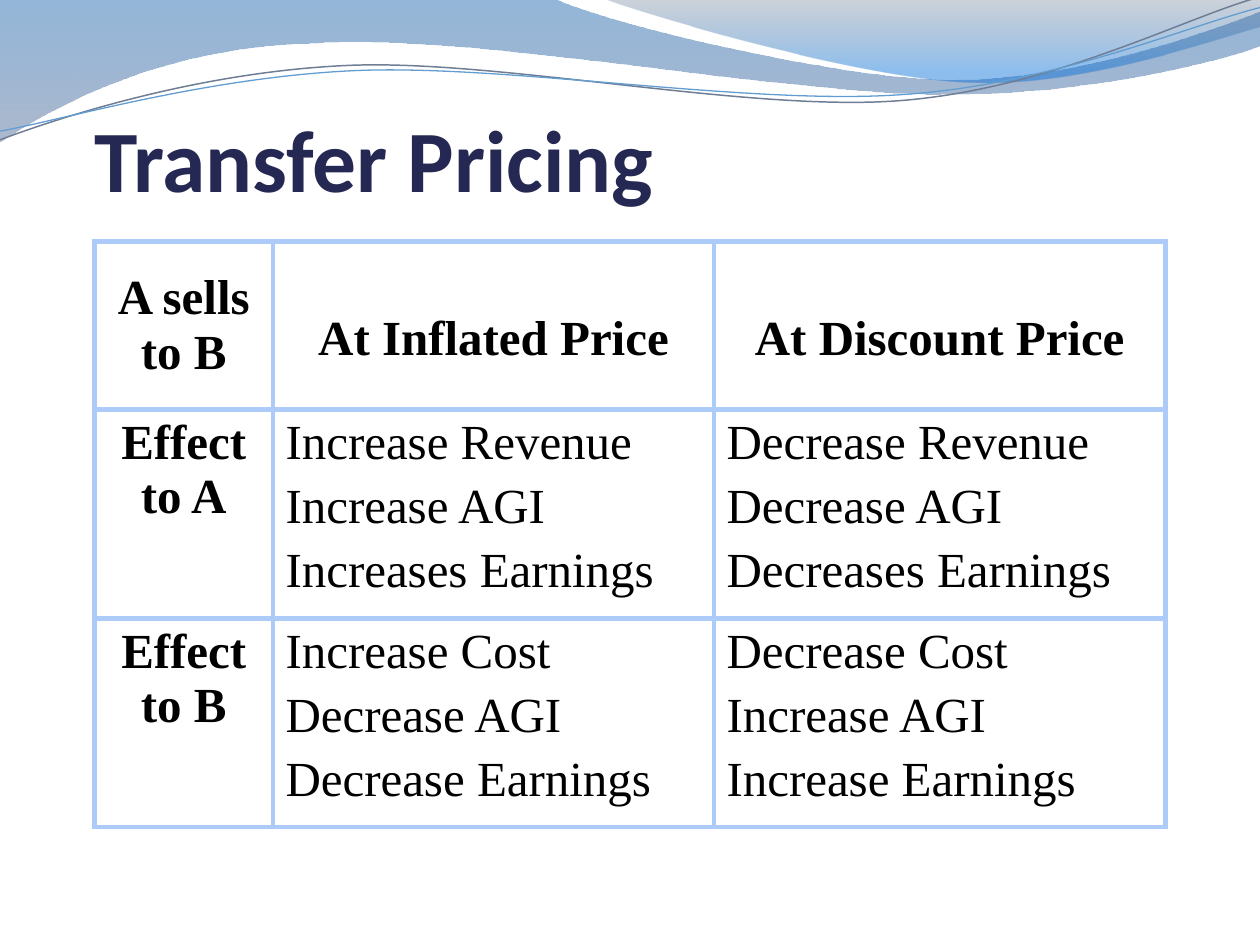
from dataclasses import dataclass

from lxml import etree
from pptx import Presentation
from pptx.dml.color import RGBColor
from pptx.enum.text import MSO_ANCHOR, PP_ALIGN
from pptx.oxml.ns import qn
from pptx.util import Pt

TOP, MIDDLE, BOTTOM = MSO_ANCHOR.TOP, MSO_ANCHOR.MIDDLE, MSO_ANCHOR.BOTTOM
LEFT, CENTER = PP_ALIGN.LEFT, PP_ALIGN.CENTER


@dataclass(frozen=True)
class Theme:
    title: str = "242852"
    text: str = "000000"
    border: str = "ACCBF9"
    border_width: float = 3
    title_font: str = "Calibri"
    body_font: str = "Times New Roman"
    title_size: float = 50
    body_size: float = 28
    space_before: int = 20  # percent of the line
    # Gradient stops: position, colour, opacity in percent
    wide_wave: tuple = ((0, "125EAA", 45), (1, "697FA4", 55))
    small_wave: tuple = ((0, "596982", 30), (0.8, "0670DA", 45))
    # Line colour and width
    grey_line: tuple = ("707E95", 0.85)
    blue_line: tuple = ("629DD1", 0.75)


THEME = Theme()

# Outlines in points: a pair is a line end, six numbers are a Bezier segment
WIDE_WAVE = [
    (0, 0), (316.8, -0.7),
    (342.7, 12.2, 478.1, 45.4, 545.8, 45.4),
    (614.2, 45.4, 689.8, 18.7, 720, 6.5),
    (720.7, 25.9),
    (707.8, 31.7, 626.4, 54.7, 537.1, 54),
    (447.8, 54, 275, 20.2, 185, 24.5),
    (92.9, 25.9, 33.1, 59.8, -0.7, 81.4),
    (0, 0),
]
SMALL_WAVE = [
    (344.9, -0.7),
    (366.5, 7.9, 491, 44.6, 553.7, 46.8),
    (616.3, 49.7, 691.9, 23, 720, 15.1),
    (720, 0), (344.9, -0.7),
]
GREY_LINE = [
    (0, 79.9),
    (34.6, 67, 113.8, 41, 199.4, 37.4),
    (284.4, 33.8, 427, 64.1, 513.4, 57.6),
    (599.8, 51.1, 675.4, 10.8, 718.6, -1.4),
]
BLUE_LINE = [
    (0, 74.9),
    (33.8, 69.1, 118.1, 43.9, 203.8, 40.3),
    (289.4, 36.7, 429.8, 60.5, 516.2, 54),
    (601.9, 48.2, 677.5, 15.1, 720, 4.3),
]

COLUMN_WIDTHS = [102, 252, 258]
ROW_HEIGHTS = [96, 111.5, 111.5]
PRICE_TOP_MARGIN = 40
ROWS = [
    [["A sells to B"], ["At Inflated Price"], ["At Discount Price"]],
    [["Effect to A"],
     ["Increase Revenue", "Increase AGI", "Increases Earnings"],
     ["Decrease Revenue", "Decrease AGI", "Decreases Earnings"]],
    [["Effect to B"],
     ["Increase Cost", "Decrease AGI", "Decrease Earnings"],
     ["Decrease Cost", "Increase AGI", "Increase Earnings"]],
]


def rgb(color):
    return RGBColor.from_string(color)


def add_run(p, text, font, size, color, bold):
    r = p.add_run()
    r.text = text
    r.font.name, r.font.size, r.font.bold = font, Pt(size), bold
    r.font.color.rgb = rgb(color)


def add_outline(slide, box, outline, close):
    """Build the outline through all its points, then turn triples into curves."""
    left, top = box[:2]
    points = [(Pt(left + segment[i]), Pt(top + segment[i + 1]))
              for segment in outline for i in range(0, len(segment), 2)]
    builder = slide.shapes.build_freeform(*points[0])
    builder.add_line_segments(points[1:], close=close)
    sp = builder.convert_to_shape()
    sp.shadow.inherit = False

    lines = iter(list(sp._element.iter(qn("a:lnTo"))))
    for segment in outline[1:]:
        line = next(lines)
        if len(segment) == 6:
            curve = etree.Element(qn("a:cubicBezTo"))
            line.addprevious(curve)
            for part in (line, next(lines), next(lines)):
                curve.append(part[0])
                part.getparent().remove(part)
    return sp


def add_waves(slide, box):
    # Filled waves
    for outline, stops in ((WIDE_WAVE, THEME.wide_wave), (SMALL_WAVE, THEME.small_wave)):
        sp = add_outline(slide, box, outline, True)
        sp.line.fill.background()
        sp.fill.gradient()
        sp.fill.gradient_angle = 270
        for stop, (position, color, _) in zip(sp.fill.gradient_stops, stops):
            stop.position = position
            stop.color.rgb = rgb(color)
        colors = list(sp._element.spPr.iter(qn("a:srgbClr")))
        for clr, (_, _, opacity) in zip(colors, stops):
            etree.SubElement(clr, qn("a:alpha"), val=str(opacity * 1000))

    # Thin lines
    for outline, (color, width) in ((GREY_LINE, THEME.grey_line), (BLUE_LINE, THEME.blue_line)):
        sp = add_outline(slide, box, outline, False)
        sp.fill.background()
        sp.line.color.rgb = rgb(color)
        sp.line.width = Pt(width)


def add_title(slide, box, text):
    tf = slide.shapes.add_textbox(*map(Pt, box)).text_frame
    tf.word_wrap = True
    tf.vertical_anchor = BOTTOM
    tf.margin_left = tf.margin_right = tf.margin_bottom = 0
    add_run(tf.paragraphs[0], text, THEME.title_font, THEME.title_size, THEME.title, True)


def set_borders(cell):
    tc_pr = cell._tc.get_or_add_tcPr()
    for i, side in enumerate(("lnL", "lnR", "lnT", "lnB")):
        ln = etree.Element(qn(f"a:{side}"), w=str(Pt(THEME.border_width)))
        fill = etree.SubElement(ln, qn("a:solidFill"))
        etree.SubElement(fill, qn("a:srgbClr"), val=THEME.border)
        tc_pr.insert(i, ln)


def fill_cell(cell, lines, heading):
    cell.fill.background()
    set_borders(cell)
    tf = cell.text_frame
    for i, line in enumerate(lines):
        p = tf.add_paragraph() if i else tf.paragraphs[0]
        p.alignment = CENTER if heading else LEFT
        spacing = etree.SubElement(p._p.get_or_add_pPr(), qn("a:spcBef"))
        etree.SubElement(spacing, qn("a:spcPct"), val=str(THEME.space_before * 1000))
        add_run(p, line, THEME.body_font, THEME.body_size, THEME.text, heading)


def add_pricing_table(slide, box):
    table = slide.shapes.add_table(len(ROWS), len(COLUMN_WIDTHS), *map(Pt, box)).table
    table.first_row = table.horz_banding = False
    for column, width in zip(table.columns, COLUMN_WIDTHS):
        column.width = Pt(width)
    for row, height in zip(table.rows, ROW_HEIGHTS):
        row.height = Pt(height)
    for i, row in enumerate(ROWS):
        for j, lines in enumerate(row):
            fill_cell(table.cell(i, j), lines, heading=i == 0 or j == 0)

    # Header row: the corner is centred, the prices sit lower
    table.cell(0, 0).vertical_anchor = MIDDLE
    for j in (1, 2):
        table.cell(0, j).vertical_anchor = TOP
        table.cell(0, j).margin_top = Pt(PRICE_TOP_MARGIN)


def main():
    prs = Presentation()
    prs.slide_width, prs.slide_height = Pt(720), Pt(540)
    slide = prs.slides.add_slide(prs.slide_layouts[6])
    add_waves(slide, (0, 0, 720, 82))
    add_title(slide, (54, 48, 612, 72), "Transfer Pricing")
    add_pricing_table(slide, (54, 138, sum(COLUMN_WIDTHS), sum(ROW_HEIGHTS)))
    prs.save("out.pptx")


if __name__ == "__main__":
    main()
